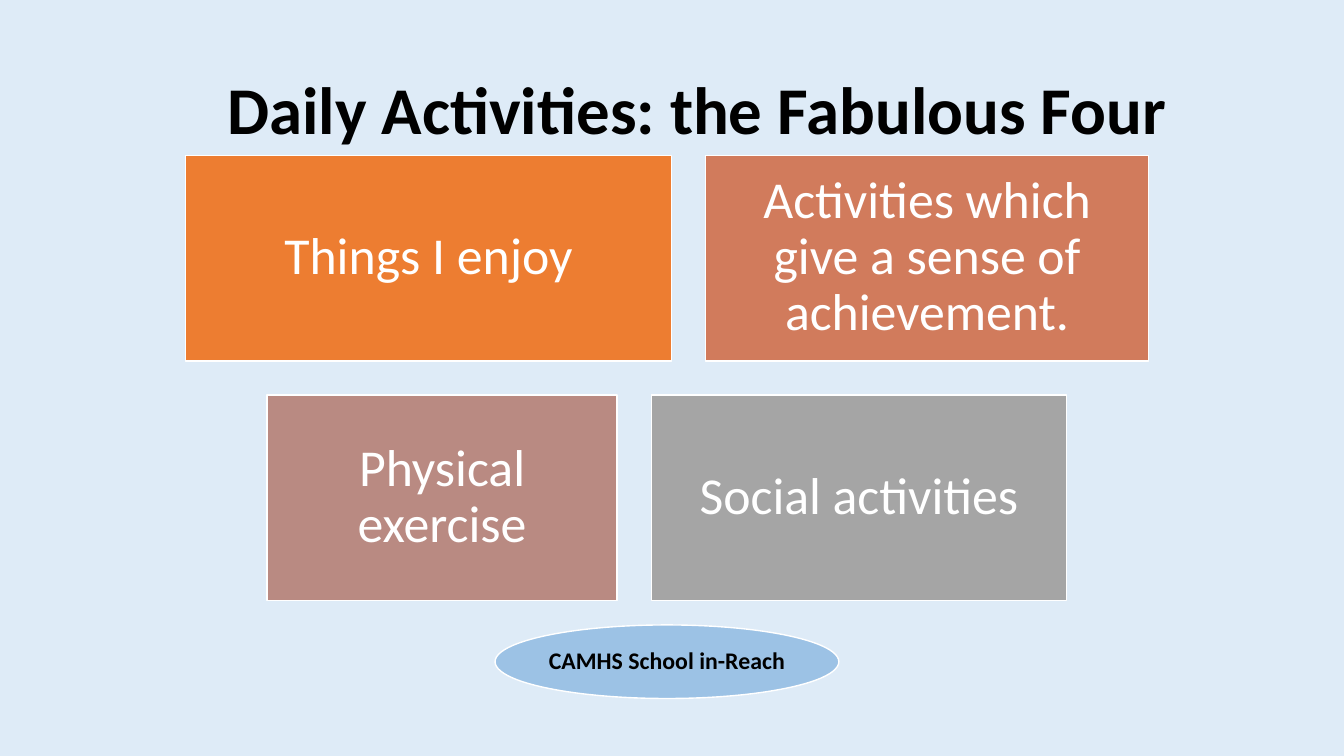
from dataclasses import dataclass

import pptx
import pptx.dml.color
import pptx.enum.shapes
import pptx.enum.text
import pptx.oxml
import pptx.oxml.ns
import pptx.util
from pptx.util import Inches

FONT = "Calibri"
CENTRE = 6.615
TOP = 1.54
TILE_HEIGHT = 2.04
GAP = 0.34


@dataclass
class Tile:
    text: str
    width: float
    fill: str


ROWS = [
    [
        Tile("Things I enjoy", 4.82, "ED7D31"),
        Tile("Activities which give a sense of achievement.", 4.39, "D17B5C"),
    ],
    [
        Tile("Physical exercise", 3.47, "B98A82"),
        Tile("Social activities", 4.12, "A5A5A5"),
    ],
]


def colour(value: str) -> pptx.dml.color.RGBColor:
    return pptx.dml.color.RGBColor.from_string(value)


def write(box, text: str, size: float, ink: str, bold: bool = False,
          inset: float = 0, spacing: float = 0.9) -> None:
    frame = box.text_frame
    frame.text = text
    frame.word_wrap = True
    frame.auto_size = pptx.enum.text.MSO_AUTO_SIZE.NONE
    frame.vertical_anchor = pptx.enum.text.MSO_ANCHOR.MIDDLE
    frame.margin_left = frame.margin_right = Inches(inset)
    frame.margin_top = frame.margin_bottom = Inches(inset)
    para = frame.paragraphs[0]
    para.alignment = pptx.enum.text.PP_ALIGN.CENTER
    para.line_spacing = spacing
    span = para.runs[0]
    span.font.name = FONT
    span.font.size = pptx.util.Pt(size)
    span.font.bold = bold
    span.font.color.rgb = colour(ink)


def add_box(page, kind, left: float, top: float, width: float, height: float,
            fill: str):
    box = page.shapes.add_shape(
        kind, Inches(left), Inches(top), Inches(width), Inches(height))
    box.shadow.inherit = False
    box.fill.solid()
    box.fill.fore_color.rgb = colour(fill)
    box.line.color.rgb = colour("FFFFFF")
    box.line.width = pptx.util.Pt(1)
    return box


def set_opacity(box, percent: int) -> None:
    tone = box.fill._xPr.find(".//" + pptx.oxml.ns.qn("a:srgbClr"))
    alpha = pptx.oxml.parse_xml(
        f'<a:alpha {pptx.oxml.ns.nsdecls("a")} val="{percent * 1000}"/>')
    tone.append(alpha)


def add_title(page) -> None:
    title = page.shapes.title
    title.left, title.top = Inches(1.92), Inches(0.5)
    title.width, title.height = Inches(10), Inches(1.02)
    write(title, "Daily Activities: the Fabulous Four", 47.7, "000000",
          bold=True, spacing=1.15)


def add_badge(page) -> None:
    width = 3.41
    badge = add_box(page, pptx.enum.shapes.MSO_SHAPE.OVAL,
                    CENTRE - width / 2, 6.2, width, 0.73, "5B9BD5")
    set_opacity(badge, 50)
    write(badge, "CAMHS School in-Reach", 17, "000000", bold=True)


def add_row(page, tiles: list[Tile], top: float) -> None:
    total = sum(tile.width for tile in tiles) + GAP * (len(tiles) - 1)
    left = CENTRE - total / 2
    for tile in tiles:
        box = add_box(page, pptx.enum.shapes.MSO_SHAPE.RECTANGLE,
                      left, top, tile.width, TILE_HEIGHT, tile.fill)
        write(box, tile.text, 37, "FFFFFF", inset=0.15)
        left += tile.width + GAP


def main() -> None:
    deck = pptx.Presentation()
    deck.slide_width, deck.slide_height = Inches(13.33), Inches(7.5)
    page = deck.slides.add_slide(deck.slide_layouts[5])
    page.background.fill.solid()
    page.background.fill.fore_color.rgb = colour("DEEBF7")
    add_badge(page)
    add_title(page)
    for index, tiles in enumerate(ROWS):
        add_row(page, tiles, TOP + index * (TILE_HEIGHT + GAP))
    deck.save("out.pptx")


if __name__ == "__main__":
    main()
